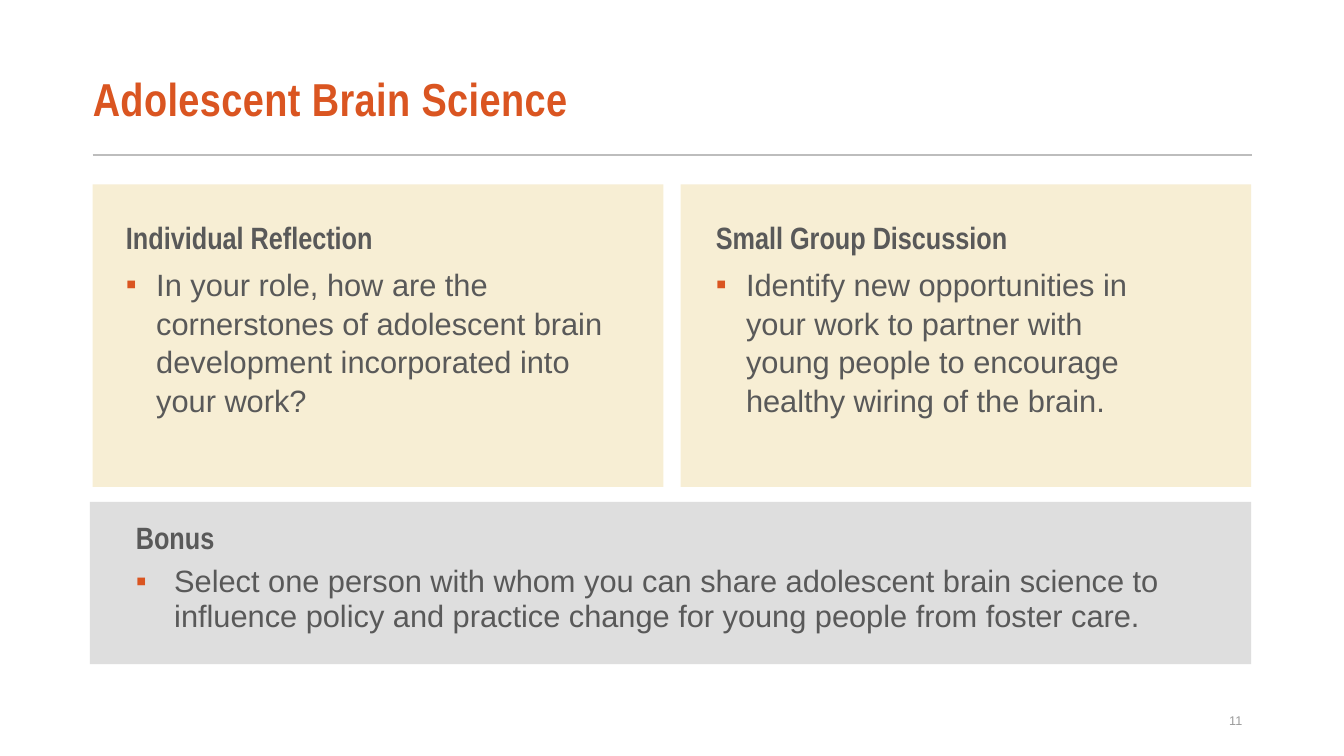
from pptx import Presentation
from pptx.dml.color import RGBColor
from pptx.enum import shapes, text
from pptx.oxml import ns
from pptx.util import Inches, Pt
from lxml import etree

TITLE = "Adolescent Brain Science"
PAGE_NUMBER = "11"

ORANGE = RGBColor(0xDA, 0x55, 0x21)
GRAY = RGBColor(0x59, 0x59, 0x59)
RULE_GRAY = RGBColor(0xBD, 0xBD, 0xBD)
NUMBER_GRAY = RGBColor(0x9B, 0x9B, 0x9B)
CREAM = RGBColor(0xF7, 0xEE, 0xD4)
SILVER = RGBColor(0xDE, 0xDE, 0xDE)

HEADING_FONT, BODY_FONT = "Arial Narrow", "Arial"
LEFT, RIGHT = 0.92, 12.42

# Each panel: heading, bullet, fill, panel area, text area,
# left inset, hanging indent, line spacing
PANELS = [
    ("Individual Reflection",
     "In your role, how are the cornerstones of adolescent brain development "
     "incorporated into your work?",
     CREAM, (LEFT, 1.83, 5.66, 3), (1.25, 2.1, 4.87, 2.51), 0, 0.3, 1.05),
    ("Small Group Discussion",
     "Identify new opportunities in your work to partner with young people to "
     "encourage healthy wiring of the brain.",
     CREAM, (6.75, 1.83, 5.66, 3), (7.1, 2.1, 4.63, 2.57), 0, 0.3, 1.05),
    ("Bonus",
     "Select one person with whom you can share adolescent brain science to "
     "influence policy and practice change for young people from foster care.",
     SILVER, (0.89, 4.98, 11.52, 1.61), (1.25, 5.12, 10.83, 1.24),
     0.1, 0.38, 0.95),
]


def inches(area):
    return [Inches(value) for value in area]


def style(para, font, size, color, bold=False):
    for span in para.runs:
        span.font.name = font
        span.font.size = Pt(size)
        span.font.bold = bold
        span.font.color.rgb = color


def add_bullet(para, indent):
    props = para._p.get_or_add_pPr()
    props.set("marL", str(Inches(indent)))
    props.set("indent", str(-Inches(indent)))
    color = etree.SubElement(props, ns.qn("a:buClr"))
    etree.SubElement(color, ns.qn("a:srgbClr"), val=str(ORANGE))
    etree.SubElement(props, ns.qn("a:buFont"), typeface=BODY_FONT)
    etree.SubElement(props, ns.qn("a:buChar"), char="▪")


def add_panel(page, heading, bullet, fill, area, text_area, inset, indent, spacing):
    panel = page.shapes.add_shape(shapes.MSO_SHAPE.RECTANGLE, *inches(area))
    panel.shadow.inherit = False
    panel.fill.solid()
    panel.fill.fore_color.rgb = fill
    panel.line.fill.background()

    frame = page.shapes.add_textbox(*inches(text_area)).text_frame
    frame.word_wrap = True
    frame.margin_left = Inches(inset)
    head, body = frame.paragraphs[0], frame.add_paragraph()
    head.text, body.text = heading, bullet
    add_bullet(body, indent)
    for para in (head, body):
        para.line_spacing = spacing
        para.space_after = Pt(6)
    style(head, HEADING_FONT, 22, GRAY, bold=True)
    style(body, BODY_FONT, 22, GRAY)


deck = Presentation()
deck.slide_width, deck.slide_height = Inches(13.33), Inches(7.5)
page = deck.slides.add_slide(deck.slide_layouts[5])

# Title
title = page.shapes.title
title.left, title.top, title.width, title.height = inches(
    (LEFT, 0.54, RIGHT - LEFT, 0.95))
frame = title.text_frame
frame.text = TITLE
frame.word_wrap = True
frame.auto_size = text.MSO_AUTO_SIZE.NONE
frame.margin_left = 0
frame.vertical_anchor = text.MSO_ANCHOR.MIDDLE
para = frame.paragraphs[0]
para.alignment = text.PP_ALIGN.LEFT
para.line_spacing = 0.87
style(para, HEADING_FONT, 33, ORANGE, bold=True)
para.runs[0].font._element.set("spc", "30")

# Rule under the title
rule = page.shapes.add_connector(
    shapes.MSO_CONNECTOR.STRAIGHT, *inches((LEFT, 1.54, RIGHT, 1.54)))
rule.line.color.rgb = RULE_GRAY
rule.line.width = Pt(1.5)
etree.SubElement(rule._element.spPr, ns.qn("a:effectLst"))

# Panels
for panel in PANELS:
    add_panel(page, *panel)

# Page number
frame = page.shapes.add_textbox(*inches((RIGHT - 3, 6.95, 3, 0.4))).text_frame
frame.text = PAGE_NUMBER
frame.word_wrap = True
frame.vertical_anchor = text.MSO_ANCHOR.MIDDLE
frame.paragraphs[0].alignment = text.PP_ALIGN.RIGHT
style(frame.paragraphs[0], BODY_FONT, 9, NUMBER_GRAY)

deck.save("out.pptx")
